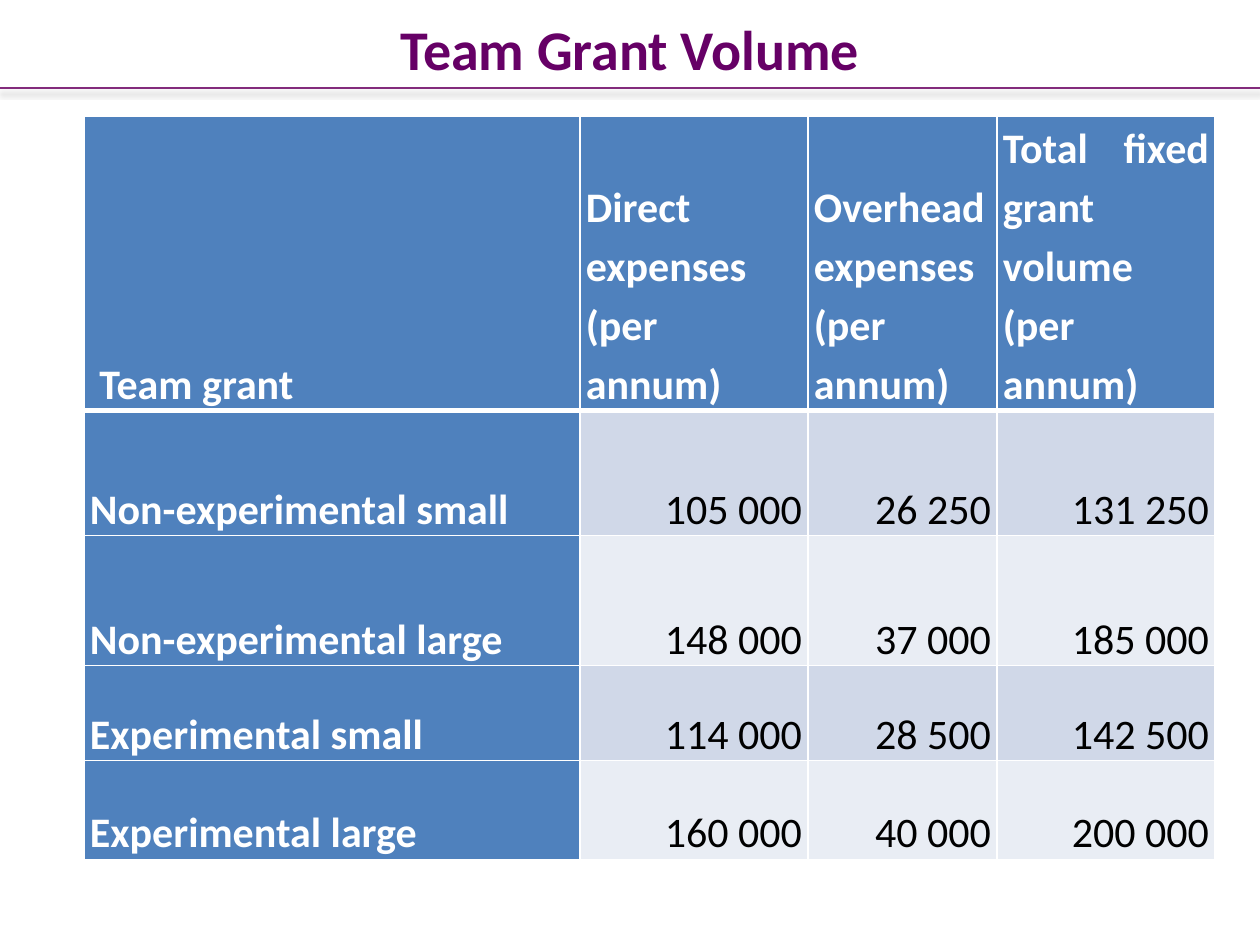
import dataclasses
from typing import Any

import lxml.etree
import pptx
import pptx.dml.color
import pptx.enum.shapes
import pptx.enum.text
import pptx.oxml
import pptx.oxml.ns
import pptx.util

PX = 914400 / 126
ALIGN = pptx.enum.text.PP_ALIGN
ANCHOR = pptx.enum.text.MSO_ANCHOR
FONT = "Calibri"
NBSP = " "
WHITE = "FFFFFF"
BLUE = "4F81BD"
BANDS = ("D0D8E8", "E9EDF4")
COLUMN_WIDTHS = (496, 228, 189, 218)
ROW_HEIGHTS = (238, 125, 130, 95, 99)
HEADINGS = (
    f"{NBSP}Team grant",
    "Direct expenses (per annum)",
    "Overhead expenses (per annum)",
    "Total fixed grant volume (per annum)",
)


@dataclasses.dataclass(frozen=True)
class Grant:
    name: str
    direct: int
    overhead: int

    def amounts(self) -> list[str]:
        values = (self.direct, self.overhead, self.direct + self.overhead)
        return [f"{value:,}".replace(",", NBSP) for value in values]


@dataclasses.dataclass(frozen=True)
class CellStyle:
    fill: str
    color: str
    bold: bool
    align: Any


LABEL = CellStyle(BLUE, WHITE, True, ALIGN.JUSTIFY)
GRANTS = (
    Grant("Non-experimental small", 105000, 26250),
    Grant("Non-experimental large", 148000, 37000),
    Grant("Experimental small", 114000, 28500),
    Grant("Experimental large", 160000, 40000),
)


def px(length: int) -> int:
    return round(length * PX)


def rgb(color: str) -> pptx.dml.color.RGBColor:
    return pptx.dml.color.RGBColor.from_string(color)


def apply(target: Any, values: dict[str, Any]) -> None:
    for attribute, value in values.items():
        setattr(target, attribute, value)


def format_font(font: Any, size: int, color: str, bold: bool) -> None:
    apply(font, {"name": FONT, "size": pptx.util.Pt(size), "bold": bold})
    font.color.rgb = rgb(color)


def draw_title(slide: Any, wording: str) -> None:
    title = slide.shapes.title
    apply(title, {"left": px(63), "top": 0, "width": px(1134), "height": px(96)})
    title.text_frame.text = wording
    title.text_frame.vertical_anchor = ANCHOR.MIDDLE
    heading = title.text_frame.paragraphs[0]
    heading.alignment = ALIGN.CENTER
    format_font(heading.runs[0].font, 32, "660066", True)


def draw_rule(slide: Any) -> None:
    rule = slide.shapes.add_connector(
        pptx.enum.shapes.MSO_CONNECTOR.STRAIGHT, 0, px(88), px(1260), px(88)
    )
    rule.line.color.rgb = rgb("832B7C")
    rule.line.width = pptx.util.Pt(1)
    rule._element.spPr.append(pptx.oxml.parse_xml(
        f'<a:effectLst {pptx.oxml.ns.nsdecls("a")}>'
        '<a:outerShdw blurRad="40000" dist="39000" dir="5400000" rotWithShape="0">'
        '<a:srgbClr val="000000"><a:alpha val="25000"/></a:srgbClr>'
        '</a:outerShdw></a:effectLst>'
    ))


def draw_border(cell: Any, side: str, points: int) -> None:
    qn = pptx.oxml.ns.qn
    border = lxml.etree.SubElement(
        cell._tc.get_or_add_tcPr(), qn(f"a:ln{side}"), w=str(pptx.util.Pt(points))
    )
    solid = lxml.etree.SubElement(border, qn("a:solidFill"))
    lxml.etree.SubElement(solid, qn("a:srgbClr"), val=WHITE)


def fill_cell(cell: Any, wording: str, style: CellStyle, row: int) -> None:
    thick_side = {0: "B", 1: "T"}.get(row)
    for side in "LRTB":
        draw_border(cell, side, 3 if side == thick_side else 1)
    cell.fill.solid()
    cell.fill.fore_color.rgb = rgb(style.fill)
    apply(cell, {
        "margin_left": px(6), "margin_right": px(6), "margin_top": 0,
        "margin_bottom": 0, "vertical_anchor": ANCHOR.BOTTOM, "text": wording,
    })
    entry = cell.text_frame.paragraphs[0]
    apply(entry, {"alignment": style.align, "line_spacing": 1.15})
    format_font(entry.runs[0].font, 24, style.color, style.bold)


def draw_grants(slide: Any) -> None:
    rows = [HEADINGS] + [(grant.name, *grant.amounts()) for grant in GRANTS]
    table = slide.shapes.add_table(
        len(rows), len(HEADINGS), px(84), px(116),
        px(sum(COLUMN_WIDTHS)), px(sum(ROW_HEIGHTS)),
    ).table
    table.first_col = True
    for column, width in zip(table.columns, COLUMN_WIDTHS):
        column.width = px(width)
    for line, height in zip(table.rows, ROW_HEIGHTS):
        line.height = px(height)
    for row, wordings in enumerate(rows):
        amount = CellStyle(BANDS[(row - 1) % 2], "000000", False, ALIGN.RIGHT)
        for column, wording in enumerate(wordings):
            style = LABEL if row == 0 or column == 0 else amount
            fill_cell(table.cell(row, column), wording, style, row)
    table.cell(0, len(HEADINGS) - 1).vertical_anchor = ANCHOR.TOP


def main() -> None:
    deck = pptx.Presentation()
    apply(deck, {"slide_width": px(1260), "slide_height": px(945)})
    slide = deck.slides.add_slide(deck.slide_layouts[5])
    draw_rule(slide)
    draw_title(slide, "Team Grant Volume")
    draw_grants(slide)
    deck.save("out.pptx")


if __name__ == "__main__":
    main()
